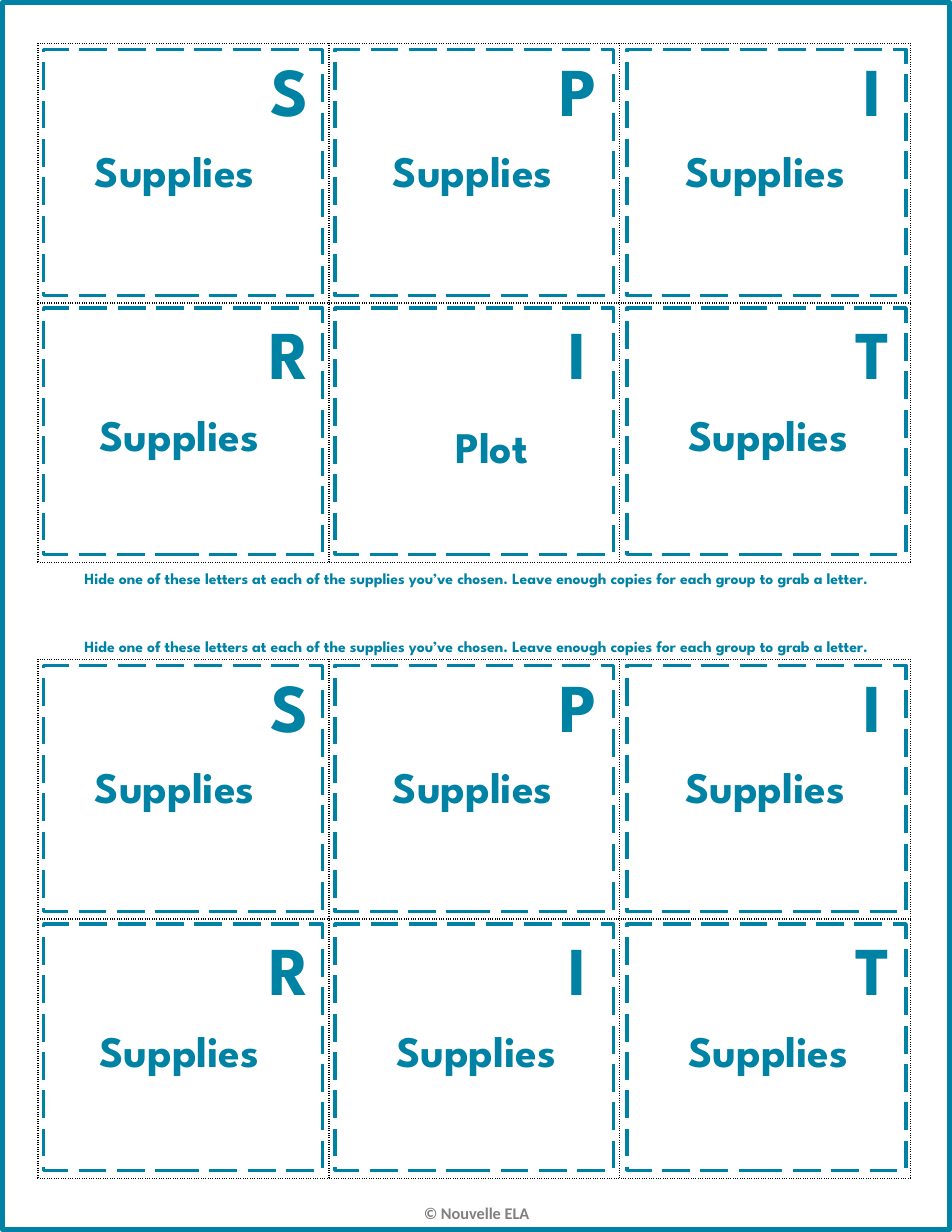
from lxml import etree
from pptx import Presentation
from pptx.dml.color import RGBColor
from pptx.enum import dml, shapes, text
from pptx.oxml import ns
from pptx.util import Inches, Pt

COLORS = {"teal": "0082A5", "gray": "808080", "black": "000000"}
FONT = "League Spartan"
LETTERS = ["SPI", "RIT"]
LETTER_X = [2.05, 4.62, 7.25]
WORD_X = [[0.64, 3.3, 5.91], [0.68, 3.33, 5.94]]
CARD_X = [0.39, 2.99, 5.6]
HINT = ("Hide one of these letters at each of the supplies you’ve chosen. "
        "Leave enough copies for each group to grab a letter.")


def color(name):
    return RGBColor.from_string(COLORS[name])


def add_text(slide, words, x, y, w, h, size, font=FONT, fill="teal"):
    box = slide.shapes.add_textbox(Inches(x), Inches(y), Inches(w), Inches(h))
    frame = box.text_frame
    frame.word_wrap = True
    frame.auto_size = text.MSO_AUTO_SIZE.SHAPE_TO_FIT_TEXT
    para = frame.paragraphs[0]
    para.alignment = text.PP_ALIGN.CENTER
    run = para.add_run()
    run.text = words
    run.font.name = font
    run.font.size = Pt(size)
    run.font.bold = True
    run.font.color.rgb = color(fill)


def add_frame(slide, x, y, w, h, width, dash=None):
    """Add an unfilled rectangle with a teal outline."""
    rect = slide.shapes.add_shape(shapes.MSO_SHAPE.RECTANGLE, Inches(x),
                                  Inches(y), Inches(w), Inches(h))
    rect.shadow.inherit = False
    rect.fill.background()
    rect.line.color.rgb = color("teal")
    rect.line.width = Pt(width)
    if dash:
        rect.line.dash_style = dash


def set_borders(cell):
    """Give all four sides of a cell a dotted line."""
    props = cell._tc.get_or_add_tcPr()
    for i, side in enumerate(("lnL", "lnR", "lnT", "lnB")):
        line = etree.Element(ns.qn(f"a:{side}"), w=str(Pt(1)))
        fill = etree.SubElement(line, ns.qn("a:solidFill"))
        etree.SubElement(fill, ns.qn("a:srgbClr"), val=COLORS["black"])
        etree.SubElement(line, ns.qn("a:prstDash"), val="sysDot")
        props.insert(i, line)


def add_grid(slide, y):
    grid = slide.shapes.add_table(2, 3, Inches(0.34), Inches(y),
                                  Inches(7.79), Inches(4.63)).table
    grid.first_row = False
    grid.horz_banding = False
    for cell in grid.iter_cells():
        cell.fill.background()
        set_borders(cell)


def add_cards(slide, top, plot=None):
    """Add a sheet of six cards; plot is the (row, column) of the Plot card."""
    add_grid(slide, top)
    spots = [(row, col) for row in range(2) for col in range(3)]
    for row, col in spots:
        add_text(slide, LETTERS[row][col], LETTER_X[col],
                 top - 0.01 + 2.35 * row, 1.08, 0.84, 44)
    for row, col in spots:
        add_frame(slide, CARD_X[col], top + 0.05 + 2.31 * row, 2.49, 2.2,
                  2.25, dml.MSO_LINE.LONG_DASH)
    for row, col in spots:
        x, y = WORD_X[row][col], top + 0.85 + 2.35 * row
        if (row, col) == plot:
            add_text(slide, "Plot", x + 0.14, y + 0.11, 1.84, 0.57, 28)
        else:
            add_text(slide, "Supplies", x, y, 1.84, 0.57, 28)


def main():
    deck = Presentation()
    deck.slide_width, deck.slide_height = Inches(8.5), Inches(11)
    slide = deck.slides.add_slide(deck.slide_layouts[6])
    add_text(slide, "© Nouvelle ELA", 2.97, 10.69, 2.57, 0.29, 10.5,
             font="Calibri", fill="gray")
    add_frame(slide, 0.02, 0.02, 8.46, 10.96, 3)
    add_cards(slide, 0.39, plot=(1, 1))
    add_cards(slide, 5.89)
    for y in (5.03, 5.64):
        add_text(slide, HINT, 0.15, y, 8.2, 0.27, 10)
    deck.save("out.pptx")


if __name__ == "__main__":
    main()
